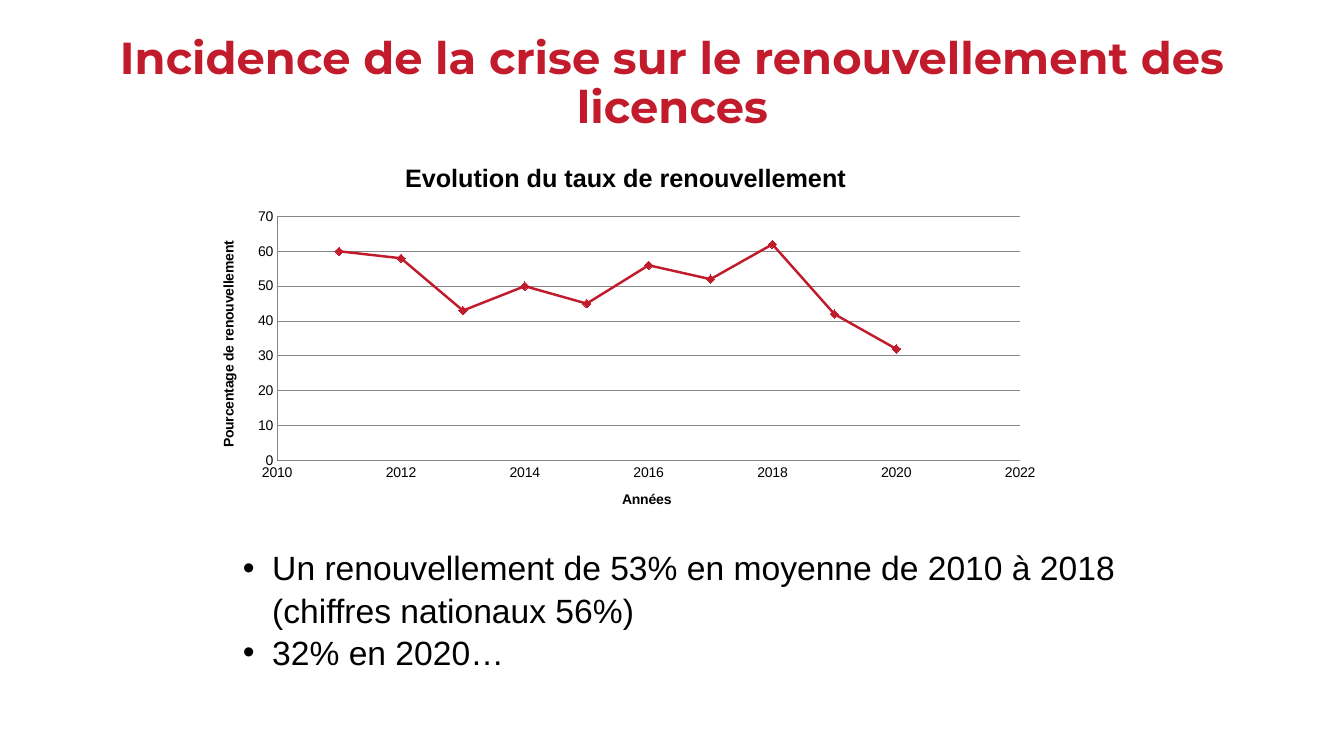
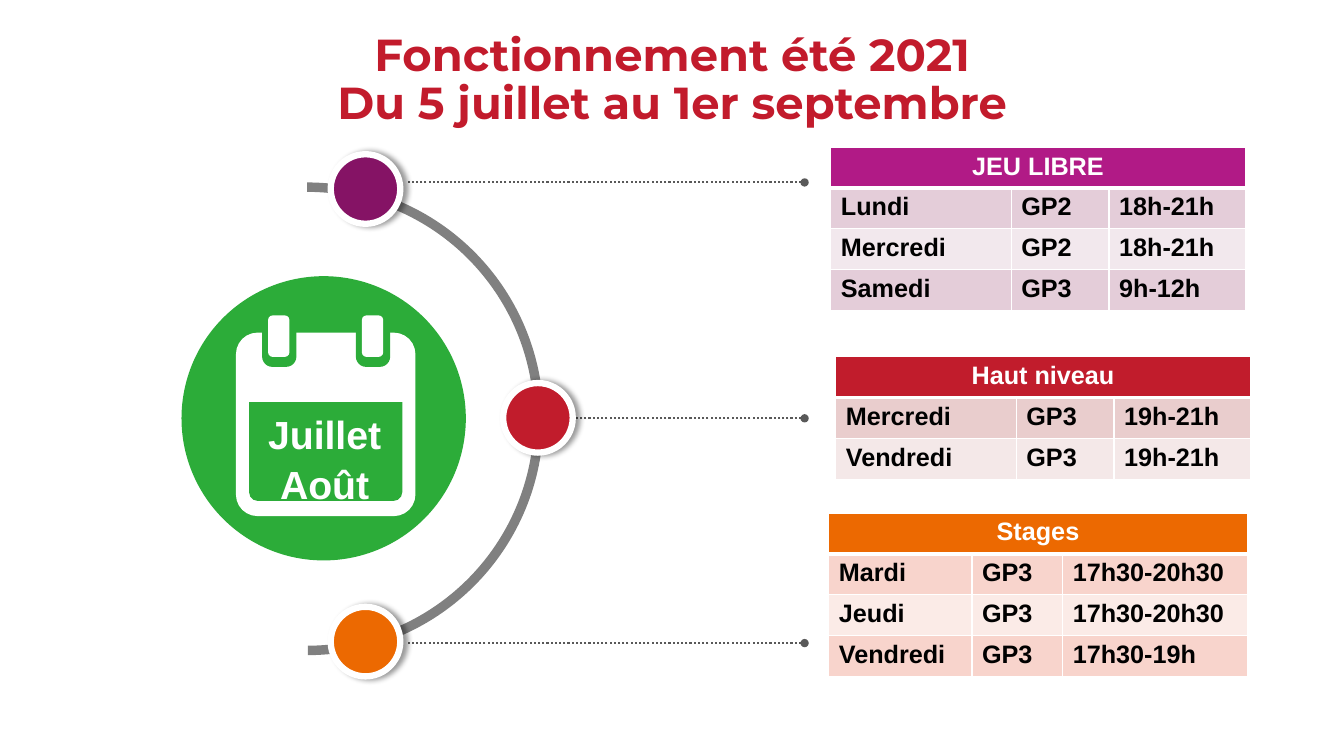
from pptx import Presentation
from pptx.chart.data import XyChartData
from pptx.dml.color import RGBColor
from pptx.enum.chart import XL_CHART_TYPE, XL_MARKER_STYLE, XL_TICK_MARK
from pptx.enum.dml import MSO_LINE
from pptx.enum.shapes import MSO_CONNECTOR, MSO_SHAPE
from pptx.enum.text import MSO_ANCHOR, MSO_AUTO_SIZE, PP_ALIGN
from pptx.oxml import parse_xml
from pptx.oxml.ns import nsdecls
from pptx.util import Inches, Pt

CENTER, LEFT, MIDDLE = PP_ALIGN.CENTER, PP_ALIGN.LEFT, MSO_ANCHOR.MIDDLE
NO_FIT, NO_TICK = MSO_AUTO_SIZE.NONE, XL_TICK_MARK.NONE
OVAL, ROUNDED = MSO_SHAPE.OVAL, MSO_SHAPE.ROUNDED_RECTANGLE
BOTTOM_ROUNDED, BLOCK_ARC = MSO_SHAPE.ROUND_2_SAME_RECTANGLE, MSO_SHAPE.BLOCK_ARC

COLORS = {
    "title": "C21B2C", "red": "C11C2C", "orange": "EC6901", "purple": "851365",
    "magenta": "B11A86", "green": "2CAC39", "arc": "808080", "leader": "595959",
    "grid": "868686", "black": "000000", "white": "FFFFFF",
}
THEME = {
    "color": {name: RGBColor.from_string(code) for name, code in COLORS.items()},
    "title": {"name": "Montserrat", "size": Pt(32), "bold": True},
    "body": {"name": "Arial", "size": Pt(24), "bold": False},
    "month": {"name": "Arial", "size": Pt(28), "bold": True},
    "cell": {"name": "Arial", "size": Pt(18), "bold": True},
    "chart_title": {"name": "Arial", "size": Pt(18), "bold": True},
    "axis_title": {"name": "Arial", "size": Pt(10), "bold": True},
    "tick": {"name": "Arial", "size": Pt(10), "bold": False},
}
COLOR = THEME["color"]


def write(tf, lines, style, color, align=LEFT, spacing=1.0):
    """Fill a text frame with one paragraph per line."""
    for i, line in enumerate(lines):
        p = tf.paragraphs[0] if i == 0 else tf.add_paragraph()
        p.text = line
        p.alignment, p.line_spacing, p.space_before = align, spacing, Pt(0)
        for r in p.runs:
            r.font.color.rgb = COLOR[color]
            for key, value in THEME[style].items():
                setattr(r.font, key, value)


def add_filled(s, kind, box, fill, adjustments=()):
    """Add a preset shape with a plain fill and no outline or shadow."""
    sp = s.shapes.add_shape(kind, *map(Inches, box))
    sp.shadow.inherit = False
    sp.fill.solid()
    sp.fill.fore_color.rgb = COLOR[fill]
    sp.line.fill.background()
    for i, value in enumerate(adjustments):
        sp.adjustments[i] = value
    return sp


prs = Presentation()
prs.slide_width, prs.slide_height = Inches(13.33), Inches(7.5)

# Slides and their titles
slides = []
for layout, text, top, height in [
    (1, "Incidence de la crise sur le renouvellement des licences", 0.38, 0.92),
    (5, "Fonctionnement été 2021\vDu 5 juillet au 1er septembre", 0.26, 1.09),
]:
    s = prs.slides.add_slide(prs.slide_layouts[layout])
    title = s.shapes.title
    title.left, title.top = Inches(0.92), Inches(top)
    title.width, title.height = Inches(11.5), Inches(height)
    tf = title.text_frame
    tf.auto_size, tf.vertical_anchor = NO_FIT, MIDDLE
    write(tf, [text], "title", "title", CENTER, 0.9)
    slides.append(s)
renewal, summer = slides

# Slide 1: renewal rate chart
data = XyChartData()
rates = data.add_series("Taux de renouvellement")
for year, rate in enumerate([60, 58, 43, 50, 45, 56, 52, 62, 42, 32], 2011):
    rates.add_data_point(year, rate)
chart = renewal.shapes.add_chart(
    XL_CHART_TYPE.XY_SCATTER_SMOOTH, Inches(1.97), Inches(1.43),
    Inches(8.47), Inches(3.82), data).chart
chart.has_legend = False
chart.font.color.rgb = COLOR["black"]
for key, value in THEME["tick"].items():
    setattr(chart.font, key, value)
write(chart.chart_title.text_frame, ["Evolution du taux de renouvellement"],
      "chart_title", "black", CENTER)

for axis, text, low, high, step in [
    (chart.category_axis, "Années", 2010, 2022, 2),
    (chart.value_axis, "Pourcentage de renouvellement", 0, 70, 10),
]:
    axis.minimum_scale, axis.maximum_scale, axis.major_unit = low, high, step
    axis.major_tick_mark = axis.minor_tick_mark = NO_TICK
    axis.has_major_gridlines = axis is not chart.category_axis and low == 0
    axis.format.line.color.rgb = COLOR["grid"]
    axis.format.line.width = Pt(0.75)
    axis.tick_labels.number_format = "0"
    axis.tick_labels.number_format_is_linked = False
    write(axis.axis_title.text_frame, [text], "axis_title", "black", CENTER)
grid = chart.value_axis.major_gridlines.format.line
grid.color.rgb, grid.width = COLOR["grid"], Pt(0.75)

plot = chart.plots[0]
plot.vary_by_categories = False
curve = plot.series[0]
curve.smooth = True
curve.format.line.color.rgb, curve.format.line.width = COLOR["red"], Pt(1.75)
curve.marker.style, curve.marker.size = XL_MARKER_STYLE.DIAMOND, 6
curve.marker.format.fill.solid()
curve.marker.format.fill.fore_color.rgb = COLOR["red"]
curve.marker.format.line.color.rgb = COLOR["red"]

# Fixed plot area inside the chart
plot_area = chart.element.xpath("c:chart/c:plotArea")[0]
for old in plot_area.xpath("c:layout"):
    plot_area.remove(old)
place = "".join(f'<c:{tag} val="{value}"/>' for tag, value in [
    ("layoutTarget", "inner"), ("xMode", "edge"), ("yMode", "edge"),
    ("x", 0.092), ("y", 0.188), ("w", 0.87), ("h", 0.634)])
plot_area.insert(0, parse_xml(
    f'<c:layout {nsdecls("c")}><c:manualLayout>{place}</c:manualLayout></c:layout>'))

# Slide 1: key figures
body = renewal.placeholders[1]
body.left, body.top = Inches(2.31), Inches(5.36)
body.width, body.height = Inches(10.04), Inches(1.31)
tf = body.text_frame
tf.auto_size, tf.word_wrap = NO_FIT, True
write(tf, ["Un renouvellement de 53% en moyenne de 2010 à 2018 (chiffres nationaux 56%)",
           "32% en 2020…"], "body", "black", LEFT, 1.05)
for p in tf.paragraphs:
    pPr = p._p.get_or_add_pPr()
    pPr.set("marL", str(Inches(0.29)))
    pPr.set("indent", str(-Inches(0.29)))
    pPr.append(parse_xml(f'<a:buChar {nsdecls("a")} char="•"/>'))

# Slide 2: dotted leaders ending in a dot
for start, y in [(4.05, 1.81), (5.4, 4.15), (4.05, 6.38)]:
    leader = summer.shapes.add_connector(
        MSO_CONNECTOR.STRAIGHT, Inches(7.98), Inches(y), Inches(start), Inches(y))
    leader.line.color.rgb, leader.line.width = COLOR["leader"], Pt(1.5)
    leader.line.dash_style = MSO_LINE.ROUND_DOT
    leader.line._get_or_add_ln().append(
        parse_xml(f'<a:headEnd {nsdecls("a")} type="oval"/>'))
    leader._element.spPr.append(parse_xml(f'<a:effectLst {nsdecls("a")}/>'))

# Slide 2: half ring made of two quarter arcs
for start, end in [(108, 162), (162, 215.89)]:
    arc = add_filled(summer, BLOCK_ARC, (0.7, 1.81, 4.69, 4.69), "arc",
                     (start, end, 0.02))
    arc.rotation = 90

# Slide 2: milestones on the ring
for x, y, fill in [(3.28, 1.53, "purple"), (4.99, 3.8, "red"), (3.28, 6.02, "orange")]:
    dot = add_filled(summer, OVAL, (x, y, 0.69, 0.69), fill)
    dot.line.color.rgb, dot.line.width = COLOR["white"], Pt(4.5)
    dot._element.spPr.xpath("a:effectLst")[0].append(parse_xml(
        f'<a:outerShdw {nsdecls("a")} blurRad="{Pt(4)}" dist="{Pt(3)}" dir="0">'
        '<a:srgbClr val="000000"><a:alpha val="40000"/></a:srgbClr></a:outerShdw>'))

# Slide 2: calendar on a green disc
add_filled(summer, OVAL, (1.8, 2.74, 2.82, 2.82), "green")
add_filled(summer, ROUNDED, (2.34, 3.3, 1.78, 1.82), "white", (0.12,))
for x in (2.66, 3.59):
    add_filled(summer, ROUNDED, (x - 0.06, 3.07, 0.34, 0.57), "green", (0.3,))
    add_filled(summer, ROUNDED, (x, 3.13, 0.21, 0.41), "white", (0.2,))
add_filled(summer, BOTTOM_ROUNDED, (2.47, 3.99, 1.52, 0.98), "green", (0, 0.09))
month = summer.shapes.add_textbox(Inches(2.52), Inches(4), Inches(1.4), Inches(1.04))
month.text_frame.word_wrap = True
write(month.text_frame, ["Juillet\vAoût"], "month", "white", CENTER, 1.05)

# Slide 2: timetables
ROW = 0.405
timetables = [
    ("JEU LIBRE", "magenta", ("E4CDD9", "F2E8ED"), 8.24, 1.46, (1.79, 0.97, 1.35),
     [("Lundi", "GP2", "18h-21h"), ("Mercredi", "GP2", "18h-21h"),
      ("Samedi", "GP3", "9h-12h")]),
    ("Haut niveau", "red", ("E9CDCD", "F4E8E8"), 8.29, 3.54, (1.79, 0.97, 1.35),
     [("Mercredi", "GP3", "19h-21h"), ("Vendredi", "GP3", "19h-21h")]),
    ("Stages", "orange", ("F8D4CC", "FBEBE7"), 8.22, 5.09, (1.42, 0.9, 1.83),
     [("Mardi", "GP3", "17h30-20h30"), ("Jeudi", "GP3", "17h30-20h30"),
      ("Vendredi", "GP3", "17h30-19h")]),
]
for heading, fill, bands, x, y, widths, sessions in timetables:
    rows = [(heading, "", "")] + sessions
    table = summer.shapes.add_table(
        len(rows), 3, Inches(x), Inches(y), Inches(sum(widths)),
        Inches(ROW * len(rows))).table
    for column, width in zip(table.columns, widths):
        column.width = Inches(width)
    for i, row in enumerate(rows):
        table.rows[i].height = Inches(ROW)
        for j, text in enumerate(row):
            cell = table.cell(i, j)
            tcPr = cell._tc.get_or_add_tcPr()
            for side in "LRTB":
                thick = (i, side) in [(0, "B"), (1, "T")]
                tcPr.append(parse_xml(
                    f'<a:ln{side} {nsdecls("a")} w="{Pt(3 if thick else 1)}"><a:solidFill>'
                    f'<a:srgbClr val="{COLORS["white"]}"/></a:solidFill></a:ln{side}>'))
            cell.fill.solid()
            cell.fill.fore_color.rgb = (
                RGBColor.from_string(bands[(i - 1) % 2]) if i else COLOR[fill])
            if text:
                write(cell.text_frame, [text], "cell", "black" if i else "white",
                      LEFT if i else CENTER)
    table.cell(0, 0).merge(table.cell(0, 2))

prs.save("out.pptx")
